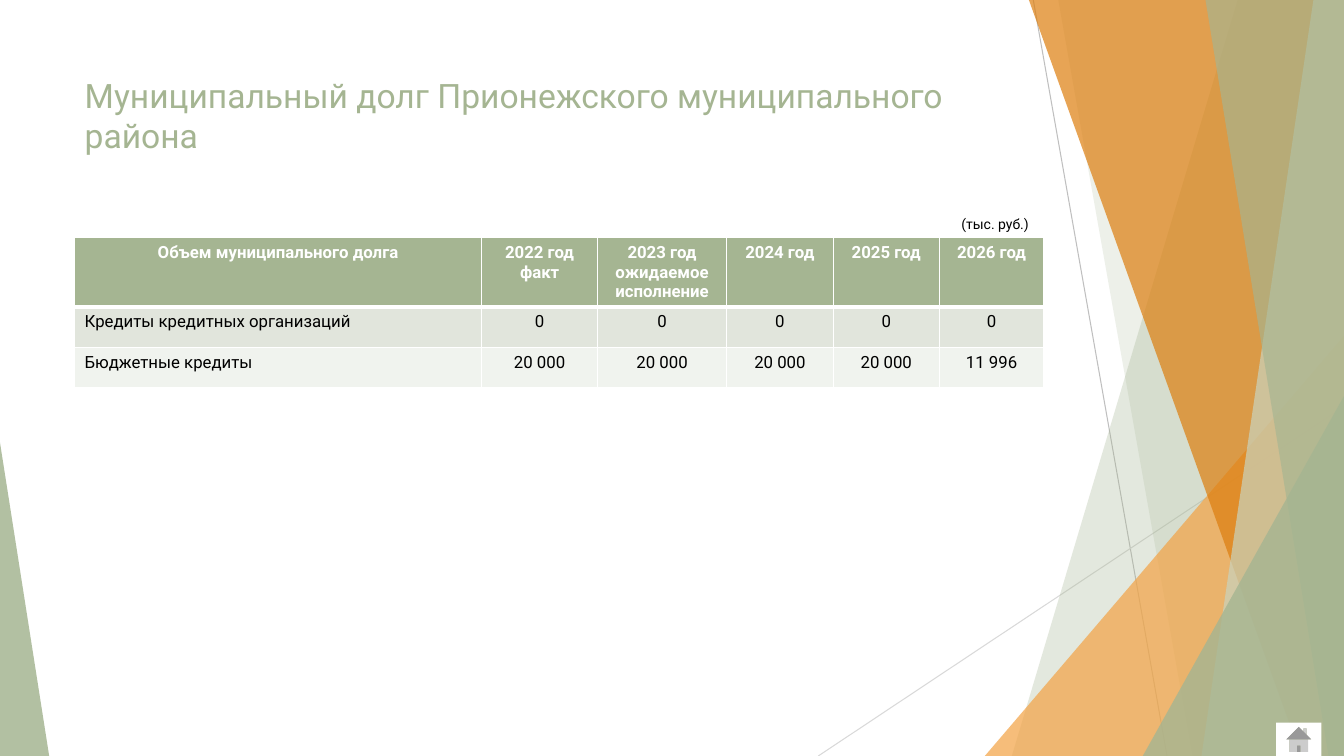
from lxml.etree import SubElement
from pptx import Presentation
from pptx.dml.color import RGBColor
from pptx.enum.shapes import MSO_CONNECTOR, MSO_SHAPE
from pptx.enum.text import MSO_ANCHOR, PP_ALIGN
from pptx.oxml import parse_xml
from pptx.oxml.ns import nsdecls, qn
from pptx.util import Cm, Pt

FONT = "Roboto"
WIDTH, HEIGHT = 33.87, 19.05
COLORS = {
    "green": "A5B592", "pale_green": "C9D3BE", "orange": "DD7E0E",
    "light_orange": "F3A447", "gray": "BFBFBF", "light_gray": "D9D9D9",
    "row_dark": "E1E5DC", "row_light": "F0F3EE", "white": "FFFFFF",
    "black": "000000",
}
BANDS_BACK = [(31.19, 25.5, "green", 30), (26.67, 30.05, "green", 20)]
BANDS_FRONT = [
    (25.93, 32.79, "orange", 70),
    (33.1, 30.28, "pale_green", 70),
    (30.38, 33.48, "green", 65),
]
DEBT_ROWS = [
    ["Объем муниципального долга", "2022 год\vфакт", "2023 год\vожидаемое исполнение",
     "2024 год", "2025 год", "2026 год"],
    ["Кредиты кредитных организаций", "0", "0", "0", "0", "0"],
    ["Бюджетные кредиты", "20 000", "20 000", "20 000", "20 000", "11 996"],
]
COLUMN_WIDTHS = [10.26, 2.92, 3.25, 2.69, 2.67, 2.64]
ROW_HEIGHTS = [1.7, 1.02, 1.02]
ROW_FILLS = ["green", "row_dark", "row_light"]


def rgb(name):
    """Return the palette colour with the given name."""
    return RGBColor.from_string(COLORS[name])


def fill_shape(shape, color, opacity=100):
    """Give a shape a plain fill without outline or shadow."""
    shape.shadow.inherit = False
    shape.line.fill.background()
    shape.fill.solid()
    shape.fill.fore_color.rgb = rgb(color)
    if opacity < 100:
        tint = shape.fill._xPr.find(qn("a:solidFill"))[0]
        SubElement(tint, qn("a:alpha"), val=str(opacity * 1000))


def format_text(frame, size, color, bold=False, align=PP_ALIGN.LEFT):
    """Format every run of a text frame alike."""
    for paragraph in frame.paragraphs:
        paragraph.alignment = align
        for run in paragraph.runs:
            run.font.name = FONT
            run.font.size = Pt(size)
            run.font.bold = bold
            run.font.color.rgb = rgb(color)


def add_line(slide, start, end, color):
    """Draw a thin decorative line."""
    line = slide.shapes.add_connector(
        MSO_CONNECTOR.STRAIGHT, *(Cm(value) for value in start + end))
    line.line.color.rgb = rgb(color)
    line.line.width = Pt(0.75)
    SubElement(line._element.spPr, qn("a:effectLst"))


def add_band(slide, top_left, bottom_left, color, opacity):
    """Draw a slanted band that reaches the right edge of the slide."""
    builder = slide.shapes.build_freeform(Cm(top_left), 0)
    builder.add_line_segments([
        (Cm(WIDTH), 0), (Cm(WIDTH), Cm(HEIGHT)), (Cm(bottom_left), Cm(HEIGHT))])
    fill_shape(builder.convert_to_shape(), color, opacity)


def add_wedge(slide, left, top, width, apex, color, opacity):
    """Draw a right triangle standing on the bottom edge of the slide."""
    wedge = slide.shapes.add_shape(
        MSO_SHAPE.ISOSCELES_TRIANGLE, Cm(left), Cm(top), Cm(width), Cm(HEIGHT - top))
    wedge.adjustments[0] = apex
    fill_shape(wedge, color, opacity)


def add_backdrop(slide):
    """Draw the lines, bands and wedges behind the content."""
    add_line(slide, (26.04, 0), (29.41, HEIGHT), "gray")
    add_line(slide, (WIDTH, 10.24), (20.62, HEIGHT), "light_gray")
    for band in BANDS_BACK:
        add_band(slide, *band)
    add_wedge(slide, 24.82, 8.46, WIDTH - 24.82, 1, "light_orange", 72)
    for band in BANDS_FRONT:
        add_band(slide, *band)
    add_wedge(slide, 28.8, 9.98, WIDTH - 28.8, 1, "green", 80)
    add_wedge(slide, 0, 11.15, 1.24, 0, "green", 85)


def set_title(slide, text):
    """Place and format the slide title."""
    title = slide.shapes.title
    title.left, title.top, title.width, title.height = Cm(1.88), Cm(1.7), Cm(24.92), Cm(2.39)
    title.text_frame.text = text
    title.text_frame.word_wrap = True
    title.text_frame.vertical_anchor = MSO_ANCHOR.MIDDLE
    format_text(title.text_frame, 24, "green")


def set_borders(cell, top, bottom):
    """Give a cell white borders, with top and bottom widths in points."""
    properties = cell._tc.get_or_add_tcPr()
    sides = {"lnL": 1, "lnR": 1, "lnT": top, "lnB": bottom}
    for position, (side, width) in enumerate(sides.items()):
        properties.insert(position, parse_xml(
            f'<a:{side} {nsdecls("a")} w="{Pt(width)}"><a:solidFill>'
            f'<a:srgbClr val="{COLORS["white"]}"/></a:solidFill></a:{side}>'))


def add_debt_table(slide):
    """Add the table of municipal debt by year."""
    table = slide.shapes.add_table(
        len(DEBT_ROWS), len(COLUMN_WIDTHS), Cm(1.88), Cm(5.99),
        Cm(sum(COLUMN_WIDTHS)), Cm(sum(ROW_HEIGHTS))).table
    for column, width in zip(table.columns, COLUMN_WIDTHS):
        column.width = Cm(width)
    for row_index, values in enumerate(DEBT_ROWS):
        table.rows[row_index].height = Cm(ROW_HEIGHTS[row_index])
        header = row_index == 0
        for column_index, value in enumerate(values):
            cell = table.cell(row_index, column_index)
            cell.text_frame.text = value
            cell.fill.solid()
            cell.fill.fore_color.rgb = rgb(ROW_FILLS[row_index])
            set_borders(cell, 3 if row_index == 1 else 1, 3 if header else 1)
            centred = header or column_index > 0
            format_text(cell.text_frame, 12, "white" if header else "black", header,
                        PP_ALIGN.CENTER if centred else PP_ALIGN.LEFT)


def add_home_button(slide):
    """Add the home button at the bottom right."""
    home = slide.shapes.add_shape(
        MSO_SHAPE.ACTION_BUTTON_HOME, Cm(32.16), Cm(18.21), Cm(1.14), Cm(0.84))
    fill_shape(home, "white")


def add_unit_note(slide, text):
    """Add the unit of measure above the table."""
    note = slide.shapes.add_textbox(Cm(23.98), Cm(5.31), Cm(2.34), Cm(0.69))
    note.text_frame.text = text
    note.text_frame.word_wrap = True
    format_text(note.text_frame, 10, "black")


def main():
    """Build and save the slide."""
    presentation = Presentation()
    presentation.slide_width, presentation.slide_height = Cm(WIDTH), Cm(HEIGHT)
    slide = presentation.slides.add_slide(presentation.slide_layouts[5])
    add_backdrop(slide)
    set_title(slide, "Муниципальный долг Прионежского муниципального района")
    add_debt_table(slide)
    add_home_button(slide)
    add_unit_note(slide, "(тыс. руб.)")
    presentation.save("out.pptx")


if __name__ == "__main__":
    main()
